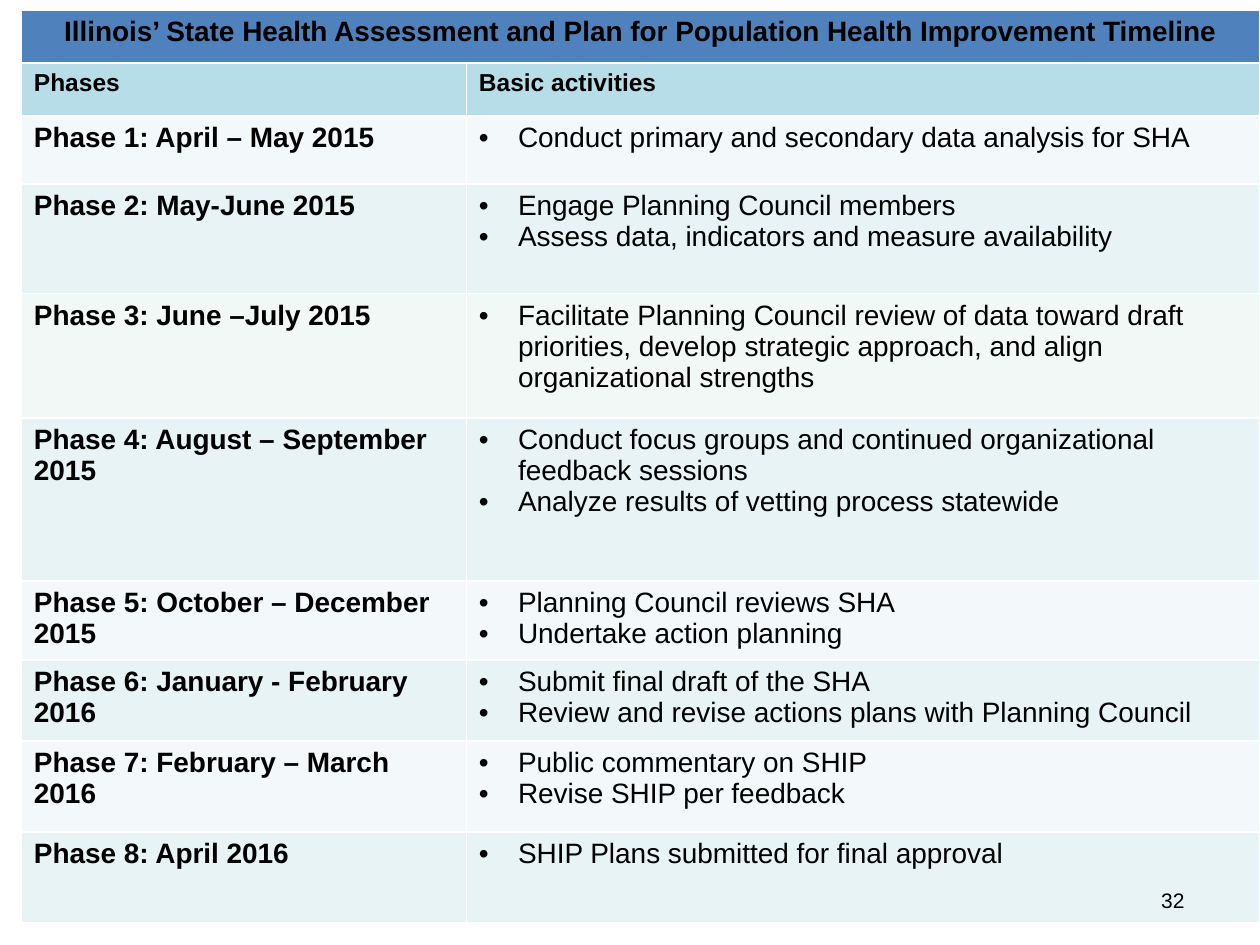
import pptx
import pptx.dml.color
import pptx.enum.text
import pptx.util
from lxml import etree
from pptx.util import Cm, Pt

RGBColor = pptx.dml.color.RGBColor
Align = pptx.enum.text.PP_ALIGN

FONT = "Arial"
BLACK = RGBColor(0x00, 0x00, 0x00)
TITLE_BLUE = RGBColor(0x4F, 0x81, 0xBD)
HEADER_TEAL = RGBColor(0xB7, 0xDE, 0xE8)
PALE_BLUE = RGBColor(0xF3, 0xF9, 0xFA)
PALE_TEAL = RGBColor(0xE7, 0xF3, 0xF4)
PALE_GREEN = RGBColor(0xF2, 0xF8, 0xF5)

TITLE = "Illinois’ State Health Assessment and Plan for Population Health Improvement Timeline"
HEADINGS = ("Phases", "Basic activities")
HEADING_HEIGHT = 1.07
COLUMN_WIDTHS = (8.97, 16)
BULLET_INDENT = Cm(0.79)

# Phase, activities, row height in cm, row colour
PHASES = [
    ("Phase 1: April – May 2015",
     ["Conduct primary and secondary data analysis for SHA"], 1.37, PALE_BLUE),
    ("Phase 2: May-June 2015",
     ["Engage Planning Council members",
      "Assess data, indicators and measure availability"], 2.21, PALE_TEAL),
    ("Phase 3: June –July 2015",
     ["Facilitate Planning Council review of data toward draft priorities, "
      "develop strategic approach, and align organizational strengths"], 2.51, PALE_GREEN),
    ("Phase 4: August – September 2015",
     ["Conduct focus groups and continued organizational feedback sessions",
      "Analyze results of vetting process statewide"], 3.28, PALE_TEAL),
    ("Phase 5: October – December 2015",
     ["Planning Council reviews SHA", "Undertake action planning"], 1.6, PALE_BLUE),
    ("Phase 6: January - February 2016",
     ["Submit final draft of the SHA",
      "Review and revise actions plans with Planning Council"], 1.63, PALE_TEAL),
    ("Phase 7: February – March 2016",
     ["Public commentary on SHIP", "Revise SHIP per feedback"], 1.83, PALE_BLUE),
    ("Phase 8: April 2016",
     ["SHIP Plans submitted for final approval"], 1.83, PALE_TEAL),
]


def add_run(paragraph, text, size, bold=False):
    run = paragraph.add_run()
    run.text = text
    run.font.name = FONT
    run.font.size = Pt(size)
    run.font.bold = bold
    run.font.color.rgb = BLACK


def add_bullet(paragraph):
    properties = paragraph._p.get_or_add_pPr()
    properties.set("marL", str(BULLET_INDENT))
    properties.set("indent", str(-BULLET_INDENT))
    for tag, name, value in (("buFont", "typeface", FONT), ("buChar", "char", "•")):
        element = etree.SubElement(properties, pptx.oxml.ns.qn("a:" + tag))
        element.set(name, value)


def fill_cell(cell, color, lines, size, bold=False, bulleted=False, alignment=Align.LEFT):
    cell.fill.solid()
    cell.fill.fore_color.rgb = color
    text_frame = cell.text_frame
    for index, line in enumerate(lines):
        paragraph = text_frame.add_paragraph() if index else text_frame.paragraphs[0]
        paragraph.alignment = alignment
        if bulleted:
            add_bullet(paragraph)
        add_run(paragraph, line, size, bold)


def add_timeline(slide, left, top, width, height):
    """Add the table: a merged title row, a heading row and one row per phase."""
    table = slide.shapes.add_table(
        len(PHASES) + 2, len(COLUMN_WIDTHS), left, top, width, height).table
    for column, column_width in zip(table.columns, COLUMN_WIDTHS):
        column.width = Cm(column_width)
    row_heights = [HEADING_HEIGHT] * 2 + [phase[2] for phase in PHASES]
    for row, row_height in zip(table.rows, row_heights):
        row.height = Cm(row_height)

    title_cell = table.cell(0, 0)
    title_cell.merge(table.cell(0, 1))
    fill_cell(title_cell, TITLE_BLUE, [TITLE], 16, bold=True, alignment=Align.CENTER)
    for column_index, heading in enumerate(HEADINGS):
        fill_cell(table.cell(1, column_index), HEADER_TEAL, [heading], 14, bold=True)
    for row_index, (phase, activities, _, color) in enumerate(PHASES, start=2):
        fill_cell(table.cell(row_index, 0), color, [phase], 16, bold=True)
        fill_cell(table.cell(row_index, 1), color, activities, 16, bulleted=True)


def add_page_number(slide, left, top, width, height):
    text_frame = slide.shapes.add_textbox(left, top, width, height).text_frame
    text_frame.word_wrap = True
    text_frame.vertical_anchor = pptx.enum.text.MSO_ANCHOR.MIDDLE
    paragraph = text_frame.paragraphs[0]
    paragraph.alignment = Align.RIGHT
    add_run(paragraph, "32", 12)


def main():
    presentation = pptx.Presentation()
    presentation.slide_width = Cm(25.4)
    presentation.slide_height = Cm(19.05)
    slide = presentation.slides.add_slide(presentation.slide_layouts[6])
    add_timeline(slide, Cm(0.43), Cm(0.2), Cm(24.97), Cm(18.4))
    add_page_number(slide, Cm(18.2), Cm(17.65), Cm(5.93), Cm(1.01))
    presentation.save("out.pptx")


if __name__ == "__main__":
    main()
